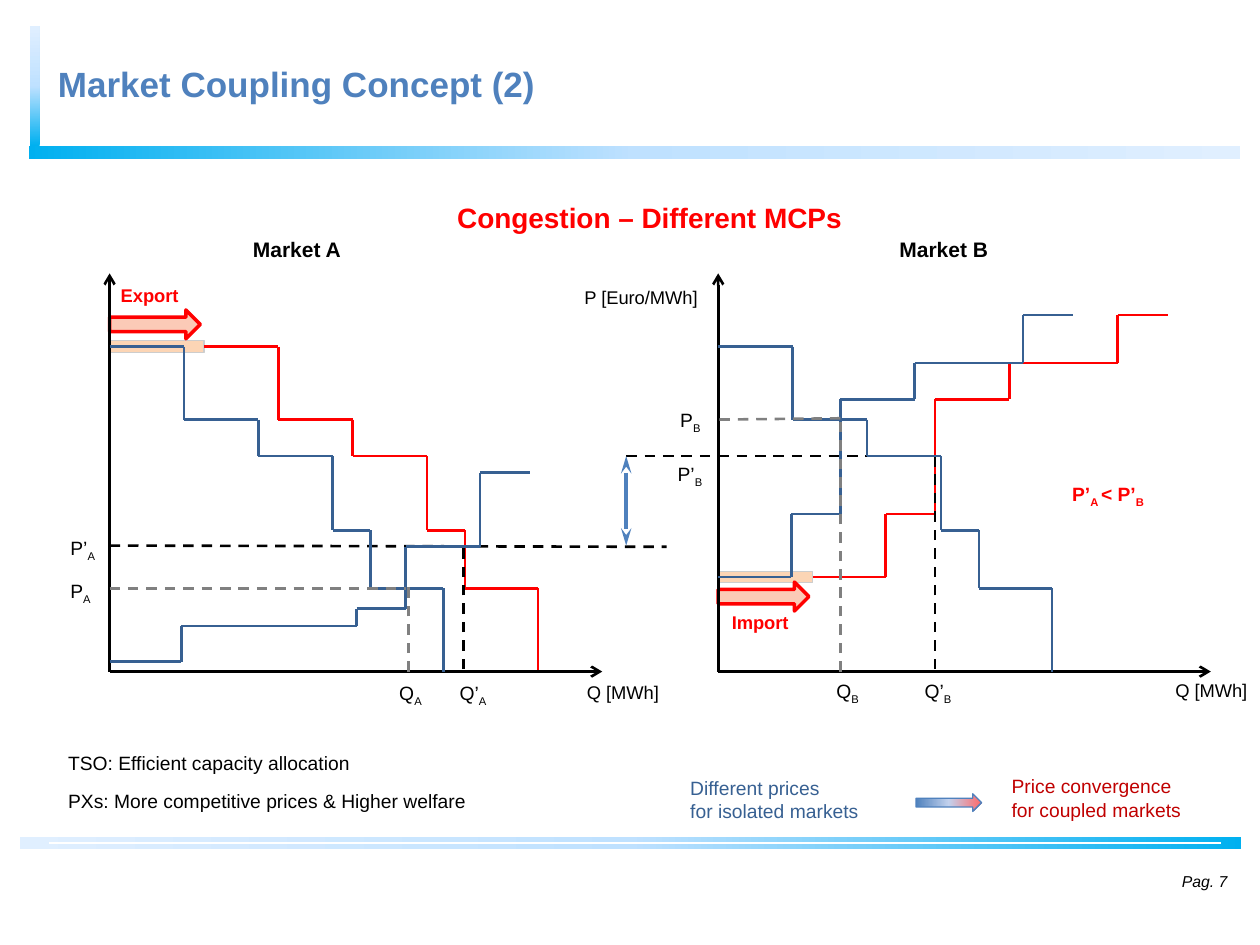
from dataclasses import dataclass
from itertools import pairwise

from lxml.etree import SubElement
from pptx import Presentation
from pptx.dml.color import RGBColor
from pptx.enum.dml import MSO_LINE
from pptx.enum.shapes import MSO_CONNECTOR, MSO_SHAPE
from pptx.enum.text import MSO_ANCHOR, MSO_AUTO_SIZE, PP_ALIGN
from pptx.oxml import parse_xml
from pptx.oxml.ns import nsdecls, qn
from pptx.util import Inches, Pt

# Grid: 100 columns by 75 rows, each a tenth of an inch
COLUMNS, ROWS = 100, 75
RED, BLUE, SKY, BLACK, GREY, WHITE = "FF0000", "376092", "4F81BD", "000000", "808080", "FFFFFF"
BAR_COLOURS = ["00B0F0", "BFE1FF", "E0EFFF"]
AXIS_A, AXIS_B, BASE, AXIS_TOP, AXIS_LENGTH = 8.7, 57, 53.3, 21.7, 39.1
TRADE = 7.5  # volume exported from A and imported into B


@dataclass
class Label:
    text: str  # parts after odd underscores are subscripts
    column: float
    row: float
    width: float
    size: float = 11
    colour: str = BLACK
    bold: bool = False
    height: float = 2.9


@dataclass
class Curve:
    columns: list[float]  # where each tread starts, and the last one ends
    rows: list[float]  # height of each tread
    falls: bool = False  # whether the last tread drops to the volume axis

    def shifted(self, distance: float) -> "Curve":
        return Curve([column + distance for column in self.columns], self.rows, self.falls)


def grid(count: float) -> int:
    return Inches(round(count / 10, 3))


def colour_of(hex_code: str) -> RGBColor:
    return RGBColor.from_string(hex_code)


def style(text_frame, size: float, colour: str, bold=False, italic=False) -> None:
    for para in text_frame.paragraphs:
        for span in para.runs:
            font = span.font
            font.name, font.size, font.bold, font.italic = "Arial", Pt(size), bold, italic
            font.color.rgb = colour_of(colour)


def place(shape, column: float, row: float, width: float, height: float) -> None:
    shape.left, shape.top, shape.width, shape.height = map(grid, (column, row, width, height))


def draw_label(page, label: Label) -> None:
    box = page.shapes.add_textbox(*map(grid, (label.column, label.row, label.width, label.height)))
    frame = box.text_frame
    frame.word_wrap = False
    for index, line in enumerate(label.text.split("\n")):
        para = frame.paragraphs[0] if index == 0 else frame.add_paragraph()
        for number, part in enumerate(line.split("_")):
            span = para.add_run()
            span.text = part
            if number % 2:
                span.font._element.set("baseline", "-25000")
    style(frame, label.size, label.colour, label.bold)


def draw_shape(page, kind, column, row, width, height, colours: list[str], outline=None, weight=0.75):
    shape = page.shapes.add_shape(kind, *map(grid, (column, row, width, height)))
    shape.shadow.inherit = False
    if len(colours) == 1:
        shape.fill.solid()
        shape.fill.fore_color.rgb = colour_of(colours[0])
    else:
        stops = "".join(
            f'<a:gs pos="{50000 * index}"><a:srgbClr val="{colour}"/></a:gs>'
            for index, colour in enumerate(colours))
        gradient = parse_xml(f'<a:gradFill {nsdecls("a")} rotWithShape="1"><a:gsLst>{stops}</a:gsLst>'
                             '<a:lin ang="0" scaled="0"/></a:gradFill>')
        shape._element.spPr.find(qn("a:prstGeom")).addnext(gradient)
    if outline:
        shape.line.color.rgb = colour_of(outline)
        shape.line.width = Pt(weight)
    else:
        shape.line.fill.background()
    return shape


def draw_line(page, start: tuple, end: tuple, colour: str, weight=1.5, dashed=False, head="", tail=""):
    line = page.shapes.add_connector(MSO_CONNECTOR.STRAIGHT, *map(grid, (*start, *end)))
    line.line.color.rgb = colour_of(colour)
    line.line.width = Pt(weight)
    if dashed:
        line.line.dash_style = MSO_LINE.DASH
    outline = line.line._get_or_add_ln()
    for tag, arrow in (("a:headEnd", head), ("a:tailEnd", tail)):
        if arrow:
            SubElement(outline, qn(tag), type=arrow, len="lg" if arrow == "stealth" else "med")
    SubElement(line._element.spPr, qn("a:effectLst"))
    return line


def draw_curve(page, curve: Curve, colour: str, band=None, side: int = 0) -> None:
    corners = []
    for row, (left, right) in zip(curve.rows, pairwise(curve.columns)):
        corners += [(left, row), (right, row)]
    if curve.falls:
        corners.append((curve.columns[-1], BASE))
    lines = [draw_line(page, start, end, colour) for start, end in pairwise(corners)]
    if band is not None:
        lines[0].begin_connect(band, side)


# Demand falls to the volume axis; supply ends on its last tread
DEMAND_A = Curve([8.7, 14.6, 20.5, 26.4, 29.4, 35.2], [27.5, 33.3, 36.2, 42.1, 46.7], falls=True)
DEMAND_B = DEMAND_A.shifted(AXIS_B - AXIS_A)
SUPPLY_A = Curve([8.7, 14.4, 28.3, 32.2, 38.1, 42.1], [52.5, 49.7, 48.3, 43.4, 37.5])
SUPPLY_B = Curve([57, 62.8, 66.7, 72.6, 81.2, 85.2], [45.8, 40.8, 31.7, 28.8, 25])

# Start and end of the dashed price and volume guides
COUPLED_GUIDES = [((36.8, 53.1), (36.8, 43.4)), ((49.7, 36.2), (74.3, 36.2)),
                  ((74.2, 53.1), (74.2, 36.1)), ((8.7, 43.3), (52.9, 43.4))]
ISOLATED_GUIDES = [((8.7, 46.7), (32.2, 46.7)), ((57.1, 33.3), (66.7, 33.2)),
                   ((32.4, BASE), (32.4, 46.6)), ((66.7, BASE), (66.7, 33.3))]

LABELS = [
    Label("Congestion – Different MCPs", 35.3, 15.4, 32.9, 16, RED, True, 3.7),
    Label("Market A", 19.1, 18.3, 9, 12, bold=True),
    Label("Market B", 70.4, 18.3, 9.1, 12, bold=True),
    Label("Export", 8.6, 22.1, 6.9, 10.5, RED, True),
    Label("Import", 57.1, 48, 6.6, 10.5, RED, True),
    Label("P [Euro/MWh]", 45.4, 22.2, 11.6, 10.5),
    Label("Q [MWh]", 45.6, 53.6, 8.1, 10.5),
    Label("Q [MWh]", 92.3, 53.4, 7.7, 10.5),
    Label("P’_A", 4.6, 42.1, 4.1),
    Label("P’_B", 52.8, 36.2, 4.1),
    Label("Q’_A", 35.5, 53.6, 4.3),
    Label("Q’_B", 72.4, 53.4, 4.3),
    Label("P_A", 4.6, 45.5, 3.7),
    Label("P_B", 53, 31.9, 3.7),
    Label("Q_A", 30.7, 53.6, 3.9),
    Label("Q_B", 65.4, 53.4, 3.9),
    Label("P’_A _< P’_B", 84.1, 37.8, 8.1, 11, RED, True),
    Label("Different prices\nfor isolated markets", 53.8, 61.1, 15.4, 11, BLUE, height=4.7),
    Label("Price convergence\nfor coupled markets", 79.3, 61, 15.5, 11, "C00000", height=4.7),
]


def draw_frame(page) -> None:
    # Bars, page number, title and list of benefits
    draw_shape(page, MSO_SHAPE.RECTANGLE, 2.3, 11.55, 96.1, 1.1, BAR_COLOURS)
    upright = draw_shape(page, MSO_SHAPE.RECTANGLE, -2, 6.4, 9.5, 0.8, BAR_COLOURS)
    upright.rotation = 270
    draw_shape(page, MSO_SHAPE.RECTANGLE, 1.6, 66.4, 96.9, 1, BAR_COLOURS[::-1])
    draw_line(page, (3.9, 66.9), (96.9, 66.9), WHITE, 0.75)

    number = page.shapes.add_textbox(*map(grid, (87.5, 67.9, 10.9, 4))).text_frame
    number.text = "Pag. 7"
    number.word_wrap = True
    number.vertical_anchor = MSO_ANCHOR.MIDDLE
    number.paragraphs[0].alignment = PP_ALIGN.RIGHT
    style(number, 9, BLACK, italic=True)

    title, body = page.shapes.title, page.placeholders[1]
    place(title, 3.6, 4.45, 96.4, 5.4)
    place(body, 4.4, 59.15, 33.8, 5.9)
    title.fill.solid()
    title.fill.fore_color.rgb = colour_of(WHITE)
    title.text_frame.text = "Market Coupling Concept (2)"
    body.text_frame.text = ("TSO: Efficient capacity allocation\n"
                            "PXs: More competitive prices & Higher welfare")
    for frame in (title.text_frame, body.text_frame):
        frame.auto_size = MSO_AUTO_SIZE.NONE
        frame.vertical_anchor = MSO_ANCHOR.TOP
    title.text_frame.paragraphs[0].alignment = PP_ALIGN.LEFT
    for para, gap in zip(body.text_frame.paragraphs, (0, 8.5)):
        properties = para._p.get_or_add_pPr()
        properties.set("marL", "0")
        properties.set("indent", "0")
        SubElement(properties, qn("a:buNone"))
        para.space_before = Pt(gap)
    style(title.text_frame, 20, SKY, bold=True)
    style(body.text_frame, 11, BLACK)


def draw_markets(page) -> None:
    # Traded volume: a band and an arrow in each market
    bands = [draw_shape(page, MSO_SHAPE.RECTANGLE, column, row, TRADE, 0.9, ["FCD5B5"], "CDCDCD")
             for column, row in ((AXIS_A, 27.05), (AXIS_B, 45.35))]
    for column, row in ((AXIS_A, 24.6), (AXIS_B, 46.2)):
        draw_shape(page, MSO_SHAPE.RIGHT_ARROW, column, row, 7.2, 2.3, ["FBCAB7"], RED, 2)

    # Coupled curves, guides and the remaining price gap
    for curve, band in zip((DEMAND_A, SUPPLY_B), bands):
        draw_curve(page, curve.shifted(TRADE), RED, band, 3)
    for start, end in COUPLED_GUIDES:
        draw_line(page, start, end, BLACK, dashed=True)
    draw_line(page, (49.7, 36.2), (49.7, 43.3), SKY, 2, head="stealth", tail="stealth")

    # Axes
    for axis in (AXIS_A, AXIS_B):
        for end in ((axis + AXIS_LENGTH, BASE), (axis, AXIS_TOP)):
            draw_line(page, (axis, BASE), end, BLACK, tail="arrow")

    # Isolated curves and guides
    draw_curve(page, DEMAND_A, BLUE, bands[0], 1)
    draw_curve(page, DEMAND_B, BLUE)
    draw_curve(page, SUPPLY_A, BLUE)
    draw_curve(page, SUPPLY_B, BLUE, bands[1], 1)
    for start, end in ISOLATED_GUIDES:
        draw_line(page, start, end, GREY, dashed=True)


def main() -> None:
    deck = Presentation()
    deck.slide_width, deck.slide_height = grid(COLUMNS), grid(ROWS)
    page = deck.slides.add_slide(deck.slide_layouts[1])
    draw_frame(page)
    draw_markets(page)
    for label in LABELS:
        draw_label(page, label)
    draw_shape(page, MSO_SHAPE.RIGHT_ARROW, 72.7, 63, 5.2, 1.4, [SKY, "C2D1ED", "FF6969"], SKY)
    deck.save("out.pptx")


if __name__ == "__main__":
    main()
